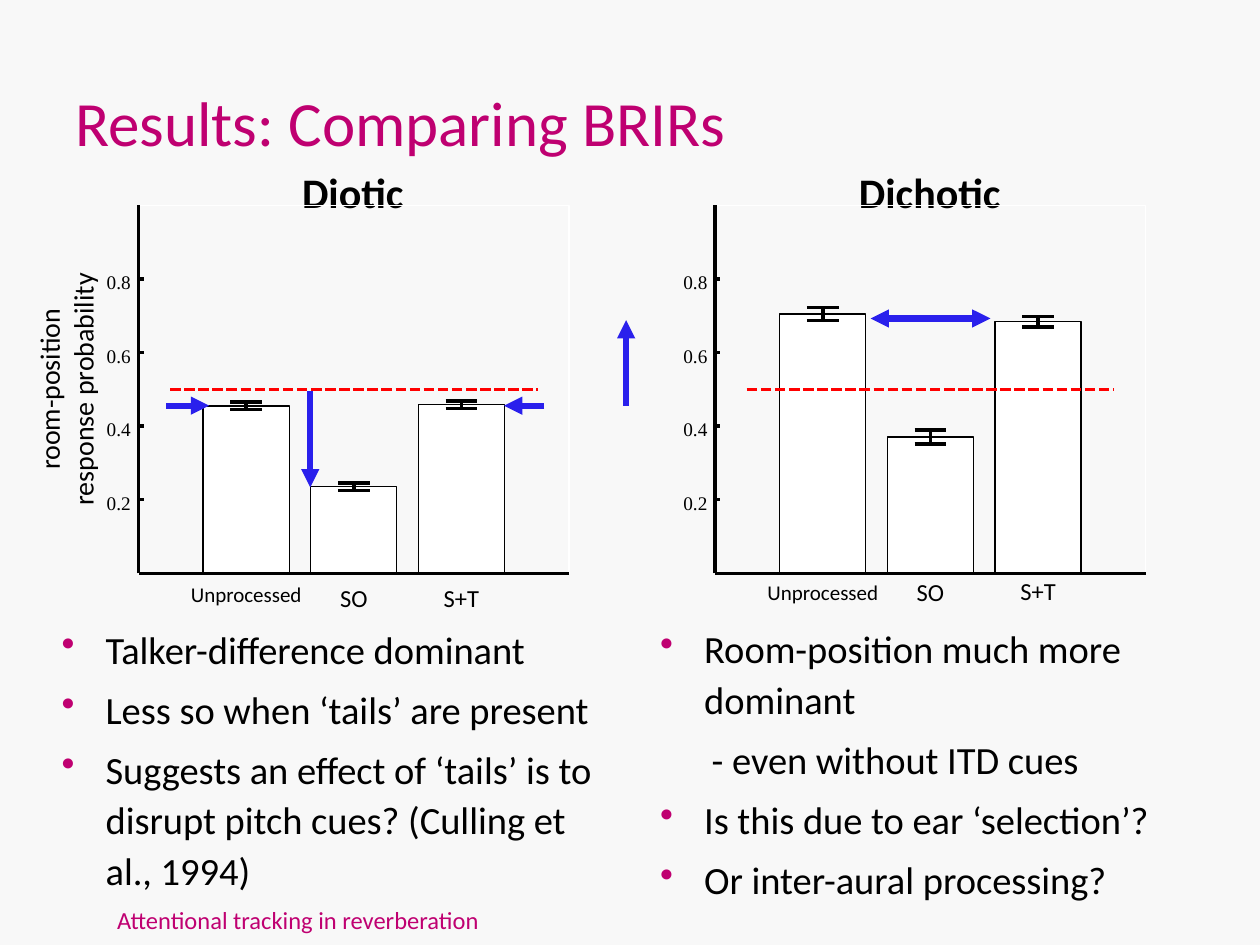
from dataclasses import dataclass

from lxml import etree
from pptx import Presentation
from pptx import util as u
from pptx.dml.color import RGBColor
from pptx.enum import dml, shapes, text
from pptx.oxml.ns import qn

COLOURS = {
    "background": "F8F8F8",
    "accent": "BF0071",
    "ink": "000000",
    "white": "FFFFFF",
    "reference": "FF0000",
    "arrow": "2A20EC",
}

FRAME_TOP, FRAME_WIDTH, FRAME_HEIGHT = 117.4, 246, 210.2
BASELINE = FRAME_TOP + FRAME_HEIGHT
BAR_WIDTH = FRAME_WIDTH / 5
CAP_HALF_WIDTH = 9.1
HAIRLINE = 0
INDENT = 25.2


@dataclass
class Bar:
    label: str
    label_size: float
    label_top: float
    value: float
    error: float


@dataclass
class Panel:
    left: float
    bars: list[Bar]


@dataclass
class Arrow:
    start: tuple[float, float]
    end: tuple[float, float]
    double: bool = False


@dataclass
class Line:
    words: str
    bullet: bool = False
    indent: float = 0


PANELS = [
    Panel(79.2, [
        Bar("Unprocessed", 12, 329, 0.455, 0.01),
        Bar("SO", 14, 329.8, 0.235, 0.01),
        Bar("S+T", 14, 329.8, 0.458, 0.01),
    ]),
    Panel(408.7, [
        Bar("Unprocessed", 12, 327.6, 0.705, 0.018),
        Bar("SO", 14, 326.2, 0.37, 0.019),
        Bar("S+T", 14, 325.4, 0.684, 0.014),
    ]),
]

ARROWS = [
    Arrow((357.8, 231.8), (357.8, 182.9)),
    Arrow((177.3, 223.2), (177.3, 278.5)),
    Arrow((311, 231.8), (288, 231.8)),
    Arrow((95, 231.8), (119.5, 231.8)),
    Arrow((566, 182), (497.5, 182), double=True),
]

DIOTIC_POINTS = [
    Line("Talker-difference dominant", bullet=True),
    Line("Less so when ‘tails’ are present", bullet=True),
    Line("Suggests an effect of ‘tails’ is to disrupt pitch cues? "
         "(Culling et al., 1994)", bullet=True),
]

DICHOTIC_POINTS = [
    Line("Room-position much more dominant", bullet=True),
    Line("- even without ITD cues", indent=29.5),
    Line("Is this due to ear ‘selection’?", bullet=True),
    Line("Or inter-aural processing?", bullet=True),
]


def colour(name: str) -> RGBColor:
    return RGBColor.from_string(COLOURS[name])


def level(value: float) -> float:
    """Vertical position of a probability on the value axis."""
    return BASELINE - value * FRAME_HEIGHT


def format_indent(paragraph, line: Line) -> None:
    properties = paragraph._p.get_or_add_pPr()
    margin = INDENT if line.bullet else line.indent
    properties.set("marL", str(u.Pt(margin)))
    properties.set("indent", str(u.Pt(-INDENT if line.bullet else 0)))
    if line.bullet:
        bullet_colour = etree.SubElement(properties, qn("a:buClr"))
        etree.SubElement(bullet_colour, qn("a:srgbClr"), val=COLOURS["accent"])
        etree.SubElement(properties, qn("a:buChar"), char="•")


def add_text(slide, box, lines, *, size, font="Calibri", ink="ink", bold=False,
             align=text.PP_ALIGN.LEFT, anchor=text.MSO_ANCHOR.TOP,
             spacing=1.0, gap=0.0, inset=True, rotation=0):
    """Add a text box; lines is one string or a list of Line."""
    shape = slide.shapes.add_textbox(*(u.Pt(length) for length in box))
    shape.rotation = rotation
    frame = shape.text_frame
    frame.word_wrap = True
    frame.vertical_anchor = anchor
    if not inset:
        frame.margin_left = frame.margin_right = 0
        frame.margin_top = frame.margin_bottom = 0
    if isinstance(lines, str):
        lines = [Line(lines)]
    for index, line in enumerate(lines):
        paragraph = frame.add_paragraph() if index else frame.paragraphs[0]
        format_indent(paragraph, line)
        paragraph.alignment = align
        paragraph.line_spacing = spacing
        if index:
            paragraph.space_before = u.Pt(gap)
        run = paragraph.add_run()
        run.text = line.words
        run.font.name = font
        run.font.size = u.Pt(size)
        run.font.bold = bold
        run.font.color.rgb = colour(ink)
    return shape


def add_line(slide, start, end, *, ink="ink", width=HAIRLINE, dash=None, heads=()):
    """Add a straight line; heads holds headEnd and tailEnd for arrowheads."""
    points = (u.Pt(length) for length in (*start, *end))
    connector = slide.shapes.add_connector(shapes.MSO_CONNECTOR.STRAIGHT, *points)
    connector.line.color.rgb = colour(ink)
    connector.line.width = u.Pt(width)
    if dash:
        connector.line.dash_style = dash
    properties = connector._element.spPr
    for head in heads:
        etree.SubElement(properties.find(qn("a:ln")), qn(f"a:{head}"), type="triangle")
    etree.SubElement(properties, qn("a:effectLst"))


def add_rectangle(slide, box, *, outline, fill=None) -> None:
    shape = slide.shapes.add_shape(shapes.MSO_SHAPE.RECTANGLE,
                                   *(u.Pt(length) for length in box))
    shape.shadow.inherit = False
    if fill:
        shape.fill.solid()
        shape.fill.fore_color.rgb = colour(fill)
    else:
        shape.fill.background()
    shape.line.color.rgb = colour(outline)
    shape.line.width = u.Pt(HAIRLINE)


def add_bar(slide, bar: Bar, centre: float) -> None:
    top = level(bar.value)
    add_rectangle(slide, (centre - BAR_WIDTH / 2, top, BAR_WIDTH, BASELINE - top),
                  outline="ink", fill="white")
    ends = [level(bar.value + bar.error), level(bar.value - bar.error)]
    add_line(slide, (centre, ends[0]), (centre, ends[1]))
    for end in ends:
        add_line(slide, (centre - CAP_HALF_WIDTH, end), (centre + CAP_HALF_WIDTH, end))
    add_text(slide, (centre - 42, bar.label_top, 84, 24), bar.label,
             size=bar.label_size, align=text.PP_ALIGN.CENTER)


def add_panel(slide, panel: Panel) -> None:
    left, right = panel.left, panel.left + FRAME_WIDTH
    add_rectangle(slide, (left, FRAME_TOP, FRAME_WIDTH, FRAME_HEIGHT), outline="white")
    add_line(slide, (left, BASELINE), (left, FRAME_TOP))
    for tick in (0.2, 0.4, 0.6, 0.8):
        add_line(slide, (left, level(tick)), (left + 2.9, level(tick)))
        add_text(slide, (left - 18.2, level(tick) - 5, 21.6, 12.2), str(tick),
                 size=11, font="Times New Roman", inset=False)
    for position, bar in enumerate(panel.bars, start=1):
        add_bar(slide, bar, left + position * FRAME_WIDTH / 4)
    add_line(slide, (left, BASELINE), (right, BASELINE))
    add_line(slide, (left + 18, level(0.5)), (right - 18, level(0.5)),
             ink="reference", dash=dml.MSO_LINE.SQUARE_DOT)


def main() -> None:
    presentation = Presentation()
    presentation.slide_width, presentation.slide_height = u.Pt(720), u.Pt(540)
    slide = presentation.slides.add_slide(presentation.slide_layouts[6])
    slide.background.fill.solid()
    slide.background.fill.fore_color.rgb = colour("background")

    bottom, centre = text.MSO_ANCHOR.BOTTOM, text.PP_ALIGN.CENTER
    add_text(slide, (59.8, 513.4, 499, 26), "Attentional tracking in reverberation",
             size=14, ink="accent")
    add_text(slide, (36, 21.6, 658.8, 72.7), "Results: Comparing BRIRs",
             size=36, ink="accent", anchor=bottom)
    for left, heading in ((42.5, "Diotic"), (372.2, "Dichotic")):
        add_text(slide, (left, 77, 318.2, 50.4), heading, size=24, bold=True,
                 align=centre, anchor=bottom, spacing=1.1)
    for panel in PANELS:
        add_panel(slide, panel)
    for box, points in (((28.1, 353.5, 329, 160.6), DIOTIC_POINTS),
                        ((370.1, 353.5, 306, 165.6), DICHOTIC_POINTS)):
        add_text(slide, box, points, size=22, anchor=bottom, spacing=1.1, gap=5.3)
    for arrow in ARROWS:
        heads = ("headEnd", "tailEnd") if arrow.double else ("tailEnd",)
        add_line(slide, arrow.start, arrow.end, ink="arrow", width=3.5, heads=heads)
    add_text(slide, (-46.1, 199.4, 167.8, 46.1),
             [Line("room-position"), Line("response probability")],
             size=16, align=centre, rotation=270)
    presentation.save("out.pptx")


if __name__ == "__main__":
    main()
